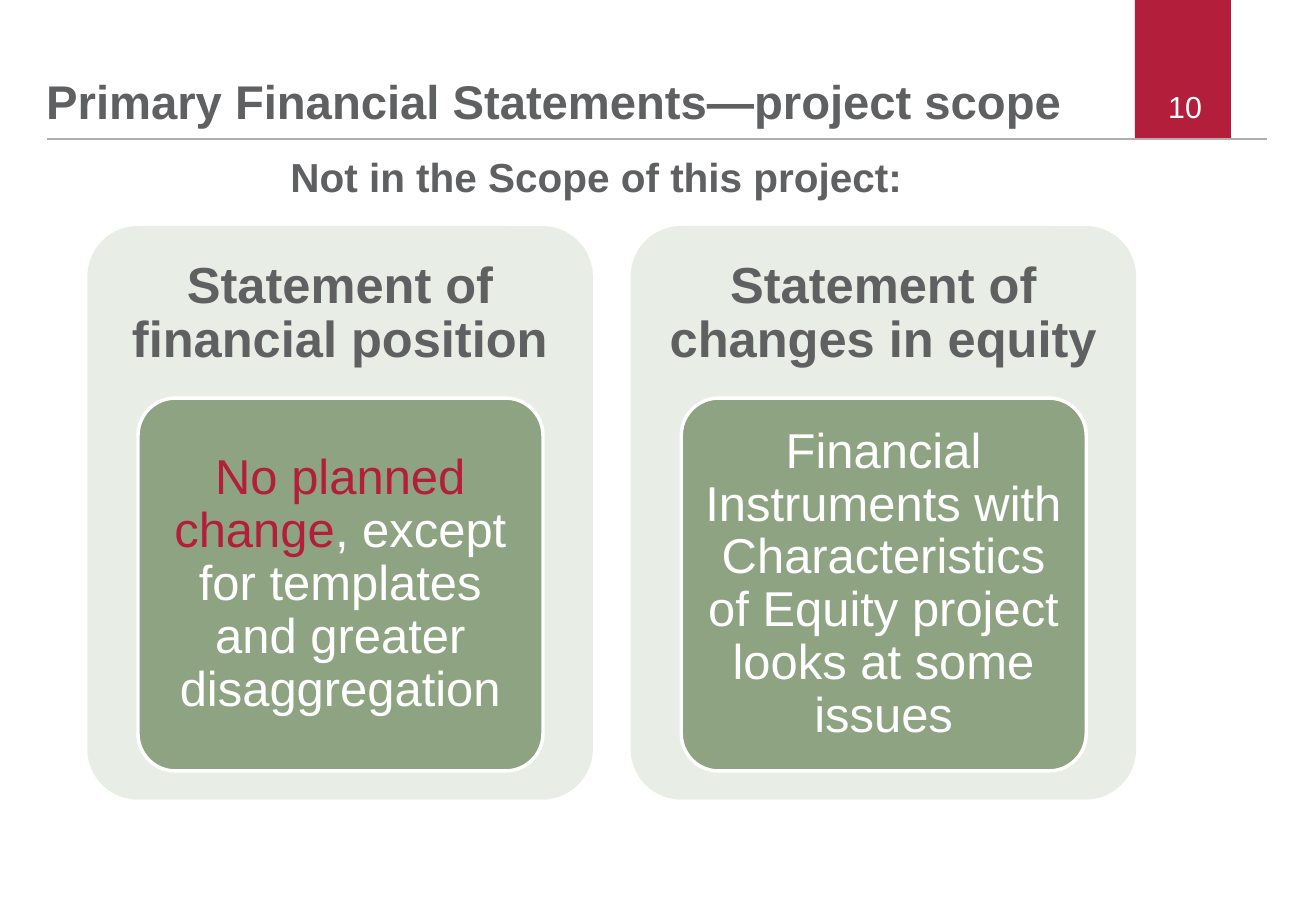
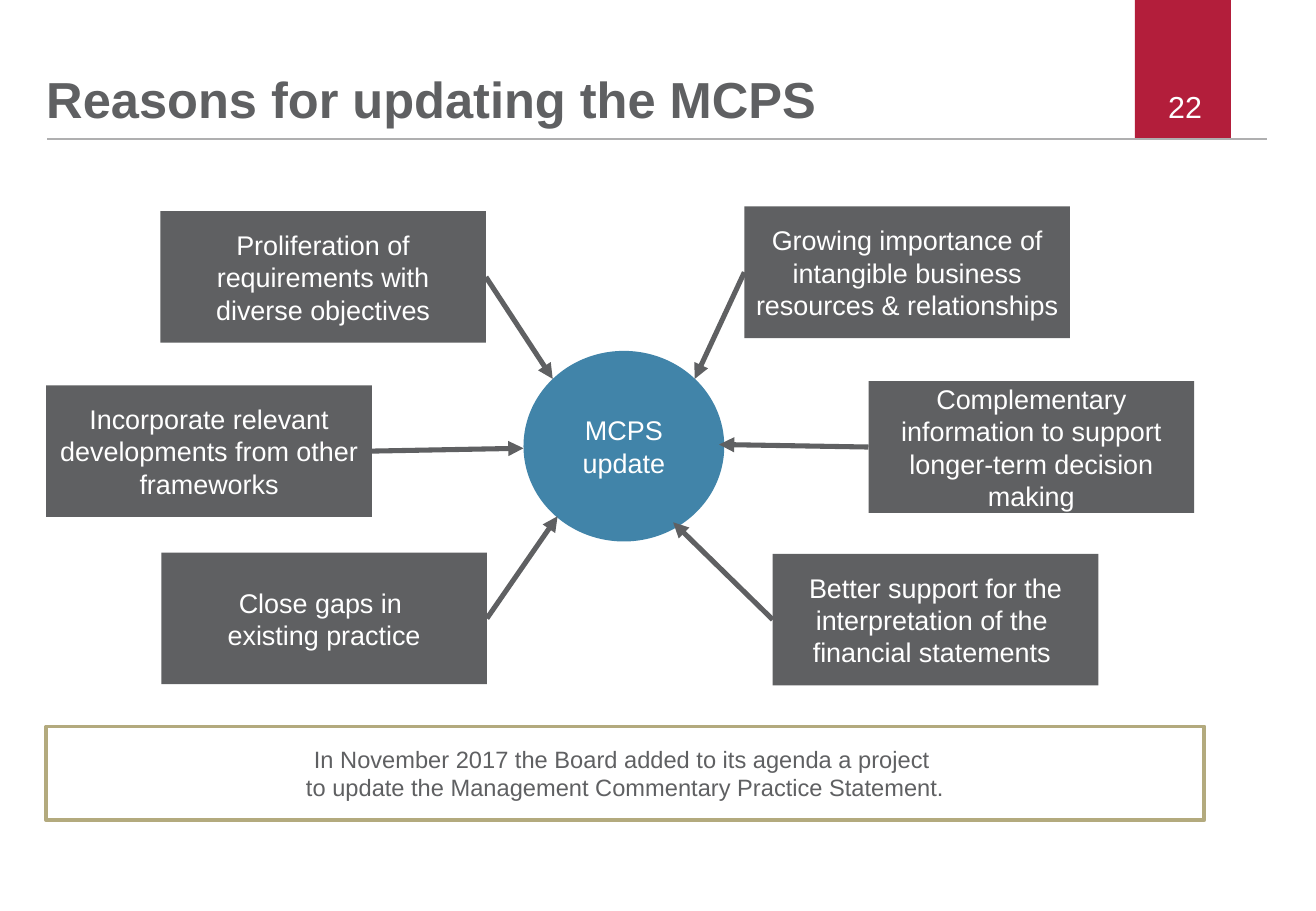
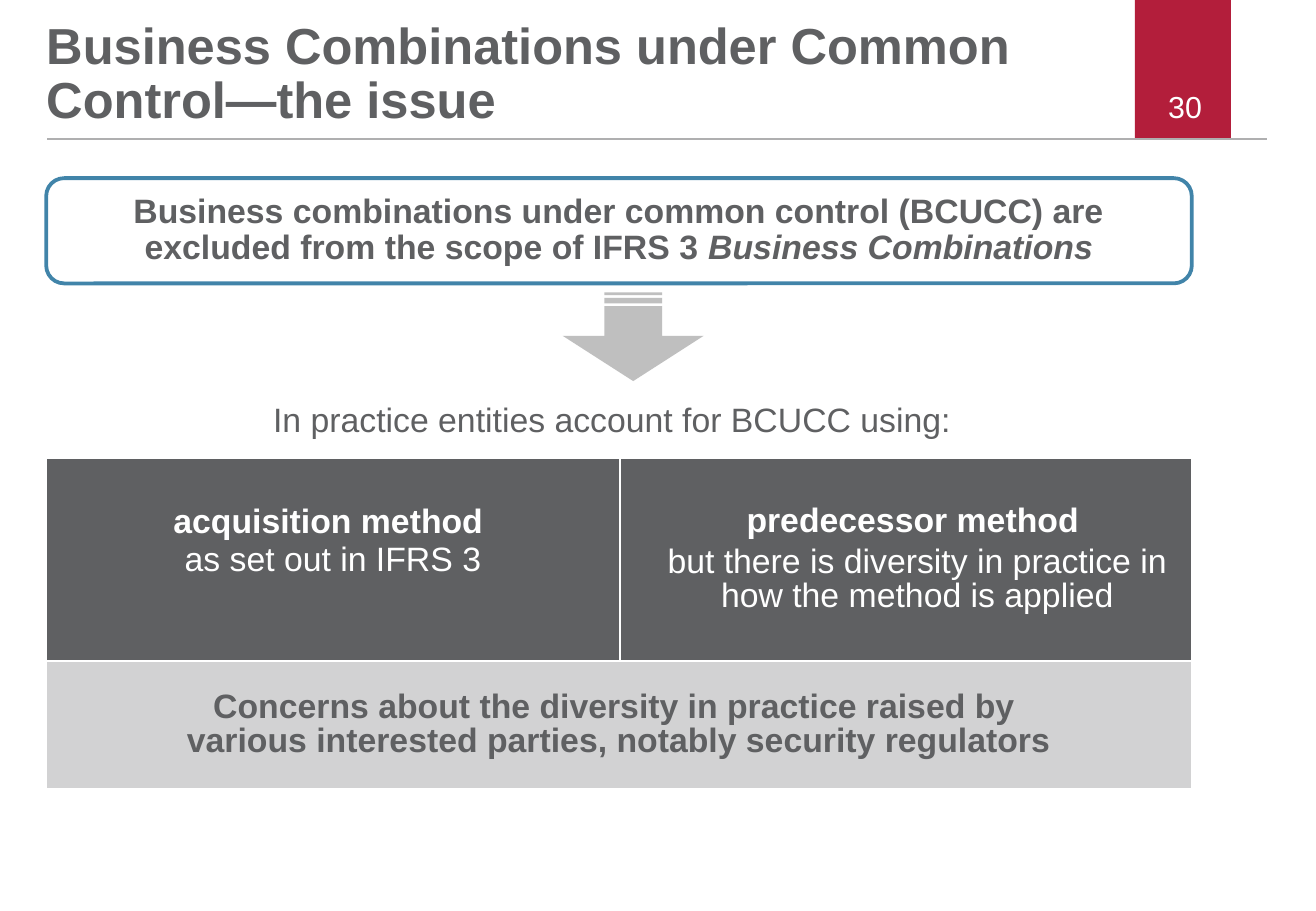
import dataclasses

import lxml.etree
import pptx
import pptx.dml.color
import pptx.enum.shapes
import pptx.enum.text
import pptx.oxml.ns
import pptx.util

Pt = pptx.util.Pt
qn = pptx.oxml.ns.qn
RGB = pptx.dml.color.RGBColor.from_string
Shape = pptx.enum.shapes.MSO_SHAPE
Align = pptx.enum.text.PP_ALIGN
Anchor = pptx.enum.text.MSO_ANCHOR


@dataclasses.dataclass(frozen=True)
class Theme:
    font: str = "Arial"
    ink: str = "5F6062"
    white: str = "FFFFFF"
    red: str = "B31E3B"
    rule: str = "AFAFB0"
    pale_green: str = "E8EDE6"
    green: str = "8DA381"
    blue: str = "4184A9"
    sand: str = "B3AA7E"
    arrow: str = "BFBFBF"
    pale_grey: str = "D2D2D3"
    title: int = 30
    long_title: int = 28
    panel: int = 29
    subtitle: int = 24
    body: int = 20
    number: int = 18
    label: int = 16
    note: int = 14


theme = Theme()


def write_text(frame, paragraphs, size, color, bold=False, align=Align.CENTER,
               spacing=None, after=None, anchor=Anchor.MIDDLE, insets=(7.2, 3.6)):
    """Each paragraph is a list of (text, changes) runs; a newline is a line break."""
    side, edge = (Pt(inset) for inset in insets)
    frame_format = {"word_wrap": True, "vertical_anchor": anchor,
                    "margin_left": side, "margin_right": side,
                    "margin_top": edge, "margin_bottom": edge}
    for name, value in frame_format.items():
        setattr(frame, name, value)
    for index, runs in enumerate(paragraphs):
        paragraph = frame.add_paragraph() if index else frame.paragraphs[0]
        paragraph_format = {"alignment": align, "line_spacing": spacing, "space_after": after}
        for name, value in paragraph_format.items():
            setattr(paragraph, name, value)
        for text, changes in runs:
            for line_index, line in enumerate(text.split("\n")):
                if line_index:
                    paragraph.add_line_break()
                run = paragraph.add_run()
                run.text = line
                run_format = {"name": theme.font, "size": Pt(size), "bold": bold,
                              "color": color, **changes}
                run.font.color.rgb = RGB(run_format.pop("color"))
                for name, value in run_format.items():
                    setattr(run.font, name, value)


def add_block(slide, kind, box, fill=None, outline=None, width=0, adjustments=()):
    block = slide.shapes.add_shape(kind, *map(Pt, box))
    block.shadow.inherit = False
    if fill:
        block.fill.solid()
        block.fill.fore_color.rgb = RGB(fill)
    else:
        block.fill.background()
    if outline:
        block.line.color.rgb = RGB(outline)
        block.line.width = Pt(width)
    else:
        block.line.fill.background()
    for index, value in enumerate(adjustments):
        block.adjustments[index] = value
    return block


deck = pptx.Presentation()
deck.slide_width, deck.slide_height = Pt(780), Pt(540)
left_edge = 27.4
lines = []  # slide, start, end, colour, width, arrowhead

# Shared header: title, band, page number, rule
headers = [
    ("Primary Financial Statements—project scope", theme.long_title, "10"),
    ("Reasons for updating the MCPS", theme.title, "22"),
    ("Business Combinations under Common Control—the issue", theme.title, "30"),
]
slides = []
for heading, heading_size, page in headers:
    slide = deck.slides.add_slide(deck.slide_layouts[5])
    slides.append(slide)
    add_block(slide, Shape.RECTANGLE, (672.6, 0, 57, 82), theme.red)
    lines.append((slide, (28, 82.3), (751, 82.3), theme.rule, 1.2, False))
    title = slide.shapes.title
    title_box = {"left": left_edge, "top": 0, "width": 618, "height": 77}
    for name, value in title_box.items():
        setattr(title, name, Pt(value))
    title.text_frame.auto_size = pptx.enum.text.MSO_AUTO_SIZE.NONE
    write_text(title.text_frame, [[(heading, {})]], heading_size, theme.ink, bold=True,
               align=Align.LEFT, spacing=0.9, anchor=Anchor.BOTTOM, insets=(0, 0))
    number = slide.shapes.add_textbox(Pt(537), Pt(48.5), Pt(182.5), Pt(29))
    write_text(number.text_frame, [[(page, {})]], theme.number, theme.white, align=Align.RIGHT)
scope, reasons, issue = slides

# Slide 1: statements outside the scope
subtitle = scope.shapes.add_textbox(Pt(165), Pt(86.4), Pt(430), Pt(36))
write_text(subtitle.text_frame, [[("Not in the Scope of this project:", {})]],
           theme.subtitle, theme.ink, bold=True, align=Align.LEFT)

statements = [
    ("Statement of financial position",
     [("No planned change", {"color": theme.red}),
      (", except for templates and greater disaggregation", {})]),
    ("Statement of changes in equity",
     [("Financial Instruments with Characteristics of Equity project "
       "looks at some issues", {})]),
]
for column, (statement, treatment) in enumerate(statements):
    card_left, card_top = 51.8 + column * 322, 134
    card = add_block(scope, Shape.ROUNDED_RECTANGLE, (card_left, card_top, 299.6, 340),
                     theme.pale_green, adjustments=(0.1,))
    write_text(card.text_frame, [[(statement, {})]], theme.title, theme.ink, bold=True,
               spacing=0.9, anchor=Anchor.TOP, insets=(0, 11))
    panel = add_block(scope, Shape.ROUNDED_RECTANGLE,
                      (card_left + 30, card_top + 102, 240, 221),
                      theme.green, theme.white, 2, (0.1,))
    write_text(panel.text_frame, [treatment], theme.panel, theme.white,
               spacing=0.9, insets=(5.8, 4.3))

# Slide 2: reasons pointing at the update
hub_left = 310.3
hub = add_block(reasons, Shape.OVAL, (hub_left, 208, 119, 113), theme.blue)
write_text(hub.text_frame, [[("MCPS update", {})]], theme.label, theme.white, insets=(6.5, 3))

reason_width, reason_height = 193, 78
reason_list = [  # left, top, arrow tip, text
    (95, 125.2, (327.6, 224.6), "Proliferation of requirements with diverse objectives"),
    (left_edge, 228.4, (310.3, 265.7), "Incorporate relevant developments from other frameworks"),
    (95.6, 327.6, (330.5, 306), "Close gaps in \nexisting practice"),
    (441.2, 122.4, (411.8, 224.6),
     "Growing importance of intangible business resources & relationships"),
    (514.8, 226, (426.2, 263.5),
     "Complementary information to support longer-term decision making"),
    (458, 328.3, (399, 309.6),
     "Better support for the interpretation of the \nfinancial statements "),
]
for left, top, tip, reason in reason_list:
    box = add_block(reasons, Shape.RECTANGLE, (left, top, reason_width, reason_height), theme.ink)
    write_text(box.text_frame, [[(reason, {})]], theme.label, theme.white, insets=(5.8, 3))
    inner_side = left + reason_width if left < hub_left else left
    lines.append((reasons, (inner_side, top + reason_height / 2), tip, theme.ink, 3, True))

agenda = add_block(reasons, Shape.RECTANGLE, (left_edge, 430.6, 686.4, 55.6),
                   outline=theme.sand, width=2.25)
write_text(agenda.text_frame,
           [[("In November 2017 the Board added to its agenda a project ", {})],
            [("to update the Management Commentary Practice Statement.", {})]],
           theme.note, theme.ink, insets=(5.8, 3))

# Slide 3: exclusion, arrow and lead-in
exclusion = add_block(issue, Shape.ROUNDED_RECTANGLE, (left_edge, 105.6, 679, 62.4),
                      outline=theme.blue, width=2.25, adjustments=(0.17,))
write_text(exclusion.text_frame,
           [[("Business combinations under common control (BCUCC) are excluded "
              "from the scope of IFRS 3 ", {}),
             ("Business Combinations", {"italic": True})]],
           theme.body, theme.ink, bold=True, spacing=0.9, insets=(8, 8))
down_arrow = add_block(issue, Shape.STRIPED_RIGHT_ARROW, (349, 157.8, 52.6, 83.6),
                       theme.arrow, adjustments=(0.41, 0.51))
down_arrow.rotation = 90
lead_in = issue.shapes.add_textbox(Pt(left_edge), Pt(235.4), Pt(671), Pt(29))
write_text(lead_in.text_frame, [[("In practice entities account for BCUCC using:", {})]],
           theme.body, theme.ink, spacing=0.9)

# Slide 3: table of methods
methods = issue.shapes.add_table(2, 2, Pt(left_edge), Pt(271.8), Pt(679), Pt(196)).table
methods.first_row = methods.horz_banding = False
for column, width in zip(methods.columns, (340, 339)):
    column.width = Pt(width)
for row, height in zip(methods.rows, (120, 76)):
    row.height = Pt(height)
methods.cell(1, 0).merge(methods.cell(1, 1))

plain = {"bold": False}
cells = [  # row, column, fill, text colour, paragraphs, paragraph format, cell margins
    (0, 0, theme.ink, theme.white,
     [[("acquisition method ", {})], [("as set out in IFRS 3", plain)]],
     {}, {"margin_bottom": Pt(26)}),
    (0, 1, theme.ink, theme.white,
     [[("predecessor method ", {})],
      [("but there is diversity in practice in how the method is applied", plain)]],
     {"spacing": 0.9, "after": Pt(4)}, {"margin_left": Pt(21)}),
    (1, 0, theme.pale_grey, theme.ink,
     [[("Concerns about the diversity in practice raised by ", {})],
      [("various interested parties, notably security regulators", {})]],
     {"spacing": 0.9}, {}),
]
for row, column, fill, color, paragraphs, paragraph_format, margins in cells:
    cell = methods.cell(row, column)
    write_text(cell.text_frame, paragraphs, theme.body, color, bold=True, **paragraph_format)
    cell_format = {"vertical_anchor": Anchor.MIDDLE, **margins}
    for name, value in cell_format.items():
        setattr(cell, name, value)
    properties = cell._tc.get_or_add_tcPr()
    for side in ("a:lnL", "a:lnR", "a:lnT", "a:lnB"):
        border = lxml.etree.SubElement(properties, qn(side), w=str(Pt(1)))
        border_fill = lxml.etree.SubElement(border, qn("a:solidFill"))
        lxml.etree.SubElement(border_fill, qn("a:srgbClr"), val=theme.white)
    cell.fill.solid()
    cell.fill.fore_color.rgb = RGB(fill)

# Header rules and arrows
for slide, start, end, color, width, arrowhead in lines:
    line = slide.shapes.add_connector(pptx.enum.shapes.MSO_CONNECTOR.STRAIGHT,
                                      *map(Pt, start + end))
    line.line.color.rgb = RGB(color)
    line.line.width = Pt(width)
    properties = line._element.spPr
    if arrowhead:
        lxml.etree.SubElement(properties.find(qn("a:ln")), qn("a:tailEnd"), type="triangle")
    lxml.etree.SubElement(properties, qn("a:effectLst"))

deck.save("out.pptx")
